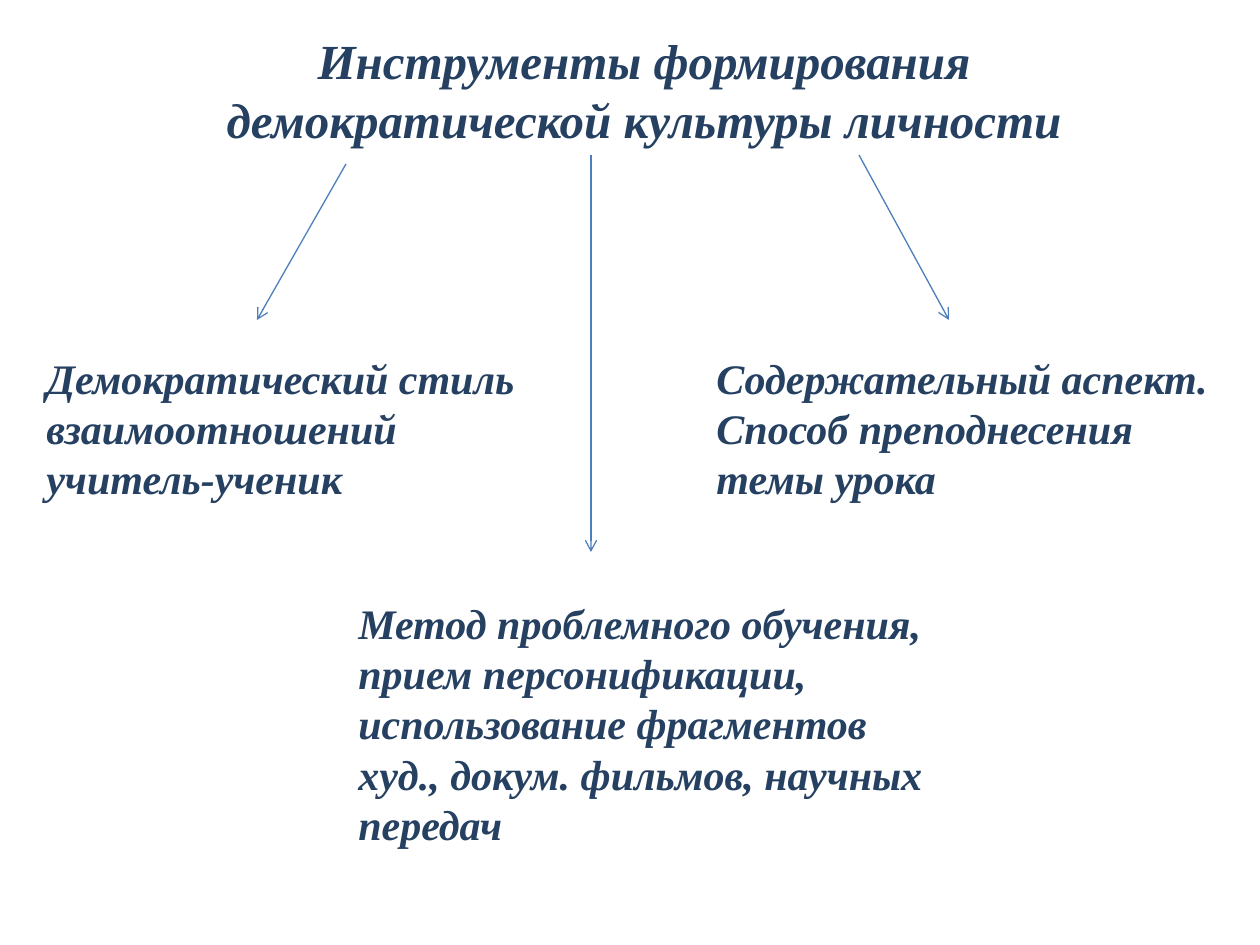
from lxml import etree
from pptx import Presentation
from pptx.dml.color import RGBColor
from pptx.enum.shapes import MSO_CONNECTOR
from pptx.enum.text import MSO_AUTO_SIZE, PP_ALIGN
from pptx.oxml.ns import qn
from pptx.util import Emu, Pt

PX_PER_INCH = 126
NAVY = RGBColor(0x25, 0x40, 0x61)
BLUE = RGBColor(0x4B, 0x7E, 0xBC)
FONT = "Times New Roman"
STRAIGHT = MSO_CONNECTOR.STRAIGHT
LEFT, CENTER = PP_ALIGN.LEFT, PP_ALIGN.CENTER
GROW = MSO_AUTO_SIZE.SHAPE_TO_FIT_TEXT


def px(*values):
    return [Emu(round(v * 914400 / PX_PER_INCH)) for v in values]


class Diagram:
    def __init__(self, prs):
        self.slide = prs.slides.add_slide(prs.slide_layouts[6])

    def text(self, box, wording, size=24, align=LEFT):
        tf = self.slide.shapes.add_textbox(*px(*box)).text_frame
        tf.word_wrap = True
        tf.auto_size = GROW
        p = tf.paragraphs[0]
        p.text = wording
        p.alignment = align
        p.font.name = FONT
        p.font.size = Pt(size)
        p.font.bold = p.font.italic = True
        p.font.color.rgb = NAVY

    def arrow(self, start, end):
        line = self.slide.shapes.add_connector(STRAIGHT, *px(*start, *end))
        line.line.color.rgb = BLUE
        line.line.width = Pt(0.75)
        sp_pr = line._element.spPr
        etree.SubElement(sp_pr.find(qn("a:ln")), qn("a:tailEnd"), type="arrow")
        etree.SubElement(sp_pr, qn("a:effectLst"))


def main():
    prs = Presentation()
    prs.slide_width, prs.slide_height = px(1260, 945)
    diagram = Diagram(prs)

    # Title
    diagram.text((123, 24, 1042, 131),
                 "Инструменты формирования демократической культуры личности",
                 size=28, align=CENTER)

    # Arrows from the title to each tool
    for start, end in (((346, 164), (257, 320)),
                       ((591, 155), (591, 552)),
                       ((859, 155), (949, 320))):
        diagram.arrow(start, end)

    # Tools
    diagram.text((34, 346, 536, 165),
                 "Демократический стиль взаимоотношений учитель-ученик")
    diagram.text((346, 591, 596, 267),
                 "Метод проблемного обучения, прием персонификации, "
                 "использование фрагментов худ., докум. фильмов, научных передач")
    diagram.text((704, 346, 536, 165),
                 "Содержательный аспект. Способ преподнесения темы урока")

    prs.save("out.pptx")


if __name__ == "__main__":
    main()
